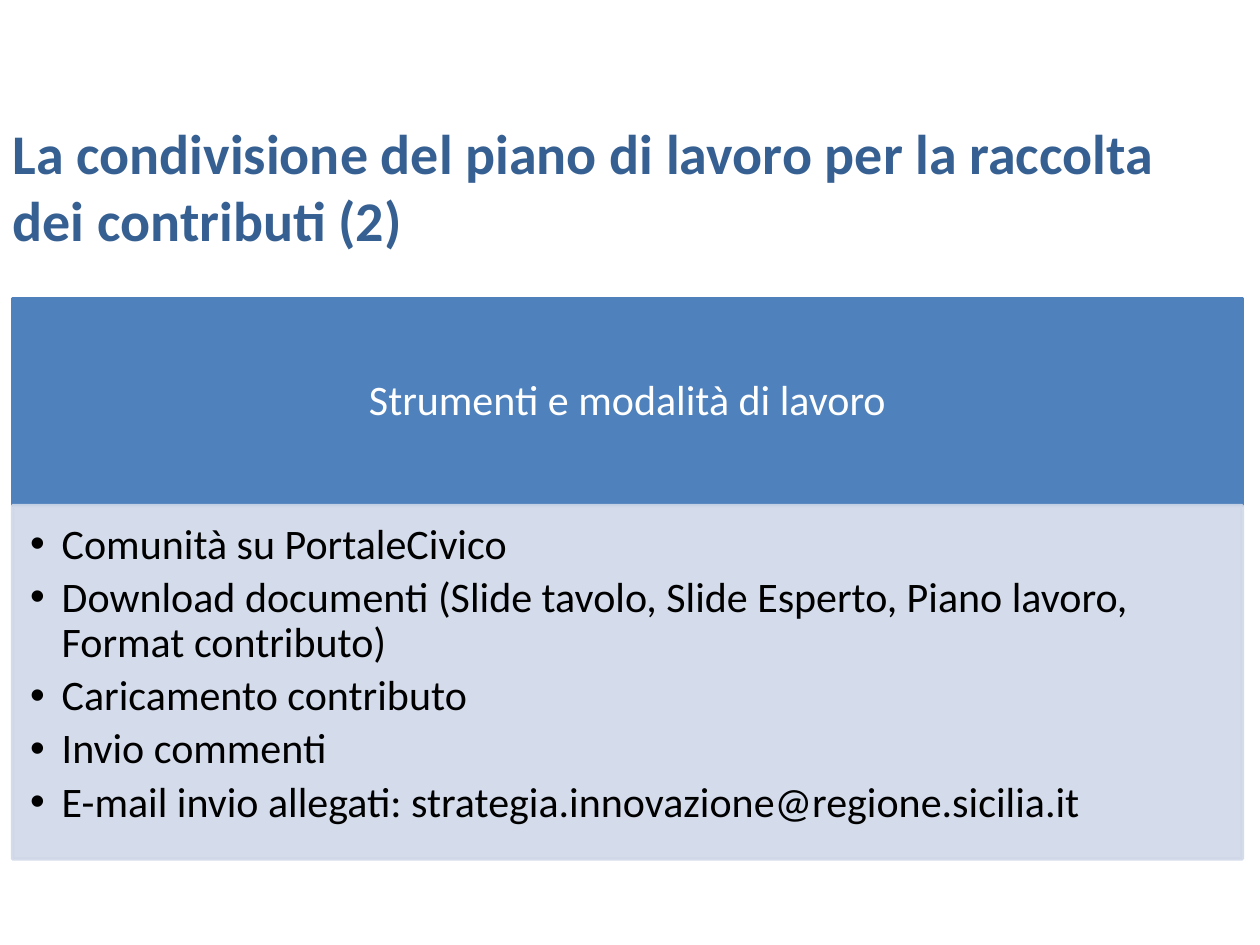
from lxml.etree import SubElement
from pptx import Presentation
from pptx.dml.color import RGBColor
from pptx.enum.shapes import MSO_SHAPE
from pptx.enum.text import MSO_ANCHOR, MSO_AUTO_SIZE, PP_ALIGN
from pptx.oxml.ns import qn
from pptx.util import Inches, Pt

COLORS = {
    "title": "376092",
    "header": "4F81BD",
    "panel": "D0D8E8",
    "light": "FFFFFF",
    "dark": "000000",
}
TITLE = "La condivisione del piano di lavoro per la raccolta dei contributi (2)"
HEADER = "Strumenti e modalità di lavoro"
TOOLS = [
    "Comunità su PortaleCivico",
    "Download documenti (Slide tavolo, Slide Esperto, Piano lavoro, Format contributo)",
    "Caricamento contributo",
    "Invio commenti",
    "E-mail invio allegati: strategia.innovazione@regione.sicilia.it",
]
WIDTH, HEIGHT = 10, 7.5
BLOCK_LEFT, BLOCK_WIDTH = 0.01, 0.976
HEADER_TOP, PANEL_TOP, PANEL_BOTTOM = 0.316, 0.535, 0.909


class SlideBuilder:
    font_name = "Calibri"
    body_size = 24
    title_size = 32

    def __init__(self, presentation):
        self.presentation = presentation
        self.slide = presentation.slides.add_slide(presentation.slide_layouts[5])

    def place(self, shape, left, top, width, height):
        """Position a shape by shares of the slide's size."""
        slide_width = self.presentation.slide_width
        slide_height = self.presentation.slide_height
        shape.left, shape.width = (round(share * slide_width) for share in (left, width))
        shape.top, shape.height = (round(share * slide_height) for share in (top, height))

    def add_text(self, paragraph, text, color, size, bold=False):
        run = paragraph.add_run()
        run.text = text
        run.font.name = self.font_name
        run.font.size = Pt(size)
        run.font.bold = bold
        run.font.color.rgb = RGBColor.from_string(COLORS[color])

    def title(self, text, *box):
        shape = self.slide.shapes.title
        self.place(shape, *box)
        frame = shape.text_frame
        frame.word_wrap = True
        frame.auto_size = MSO_AUTO_SIZE.NONE
        frame.vertical_anchor = MSO_ANCHOR.TOP
        paragraph = frame.paragraphs[0]
        paragraph.alignment = PP_ALIGN.LEFT
        self.add_text(paragraph, text, "title", self.title_size, bold=True)

    def block(self, top, bottom, color, margins, anchor, opacity=100):
        """Add a full-width rectangle and return its text frame."""
        shape = self.slide.shapes.add_shape(MSO_SHAPE.RECTANGLE, 0, 0, 0, 0)
        self.place(shape, BLOCK_LEFT, top, BLOCK_WIDTH, bottom - top)
        shape.shadow.inherit = False
        shape.line.width = Pt(2)
        for fill in (shape.fill, shape.line.fill):
            fill.solid()
            fill.fore_color.rgb = RGBColor.from_string(COLORS[color])
        if opacity < 100:
            for color_element in shape.element.spPr.iter(qn("a:srgbClr")):
                SubElement(color_element, qn("a:alpha"), val=str(opacity * 1000))
        frame = shape.text_frame
        frame.word_wrap = True
        frame.vertical_anchor = anchor
        (frame.margin_left, frame.margin_top,
         frame.margin_right, frame.margin_bottom) = map(Inches, margins)
        return frame

    def header(self, text, top, bottom):
        frame = self.block(top, bottom, "header", (0.19, 0.11, 0.19, 0.11), MSO_ANCHOR.MIDDLE)
        paragraph = frame.paragraphs[0]
        paragraph.alignment = PP_ALIGN.CENTER
        paragraph.line_spacing = 0.9
        self.add_text(paragraph, text, "light", self.body_size)

    def bullet_panel(self, items, top, bottom):
        frame = self.block(top, bottom, "panel", (0.14, 0.14, 0.19, 0.21), MSO_ANCHOR.TOP, 90)
        for index, item in enumerate(items):
            paragraph = frame.add_paragraph() if index else frame.paragraphs[0]
            paragraph.alignment = PP_ALIGN.LEFT
            paragraph.line_spacing = 0.9
            paragraph.space_after = Pt(4.4)
            properties = paragraph._p.get_or_add_pPr()
            properties.set("marL", str(Inches(0.25)))
            properties.set("indent", str(Inches(-0.25)))
            SubElement(properties, qn("a:buFont"), typeface="Arial")
            SubElement(properties, qn("a:buChar"), char="•")
            self.add_text(paragraph, item, "dark", self.body_size)


def main():
    presentation = Presentation()
    presentation.slide_width = Inches(WIDTH)
    presentation.slide_height = Inches(HEIGHT)
    builder = SlideBuilder(presentation)
    builder.title(TITLE, 0, 0.119, 0.988, 0.229)
    builder.header(HEADER, HEADER_TOP, PANEL_TOP)
    builder.bullet_panel(TOOLS, PANEL_TOP, PANEL_BOTTOM)
    presentation.save("out.pptx")


if __name__ == "__main__":
    main()
